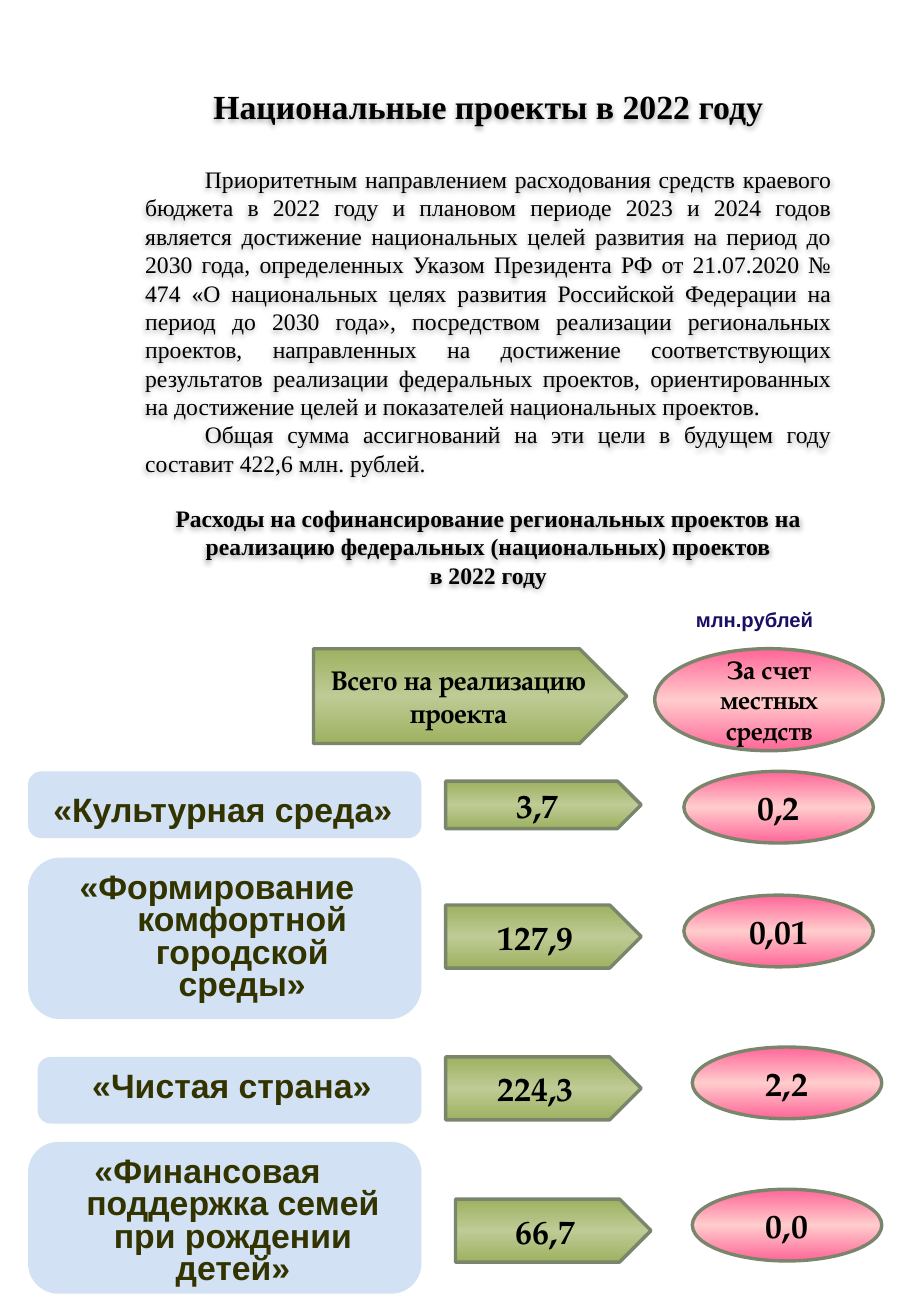
from copy import deepcopy
from dataclasses import dataclass

from lxml.etree import SubElement
from pptx import Presentation
from pptx.dml.color import RGBColor as RGB
from pptx.enum.shapes import MSO_SHAPE as SHAPE
from pptx.enum.text import MSO_ANCHOR as ANCHOR, PP_ALIGN as ALIGN
from pptx.oxml.ns import qn
from pptx.util import Pt


@dataclass(frozen=True)
class Theme:
    ink: str = "000000"
    unit: str = "190F65"
    label: str = "333300"
    panel: str = "A5C4E9"
    outline: str = "7A866C"
    green: tuple = ("9EB160", "BECB95", "9EB160")
    pink: tuple = ("FF6699", "FFCCCC", "FF6699")
    serif: str = "Times New Roman"
    sans: str = "Arial"
    figures: str = "TeX Gyre Pagella"
    large: float = 20
    arrow_head: float = 16
    oval_head: float = 15
    body: float = 14
    small: float = 12


class Page:
    def __init__(self, slide, theme):
        self.shapes = slide.shapes
        self.theme = theme

    def style(self, paragraph, font, size, color, bold=True):
        for run in paragraph.runs:
            run.font.name, run.font.size, run.font.bold = font, Pt(size), bold
            run.font.color.rgb = RGB.from_string(color)

    def shape(self, kind, box):
        shape = self.shapes.add_shape(kind, *map(Pt, box))
        shape.shadow.inherit = False
        return shape

    def article(self, box, paragraphs):
        """Unfilled frame whose text casts a soft shadow."""
        frame = self.shape(SHAPE.ROUNDED_RECTANGLE, box)
        frame.fill.background()
        frame.line.fill.background()
        effects = frame._element.spPr.find(qn("a:effectLst"))
        shadow = SubElement(effects, qn("a:outerShdw"), blurRad=str(Pt(3)),
                            dist=str(Pt(2)), dir="5400000", rotWithShape="0")
        tone = SubElement(shadow, qn("a:srgbClr"), val=self.theme.ink)
        SubElement(tone, qn("a:alpha"), val="35000")

        text = frame.text_frame
        text.word_wrap = True
        text.vertical_anchor = ANCHOR.TOP
        text.text = "\n".join(words for words, *_ in paragraphs)
        for paragraph, (_, size, bold, gap) in zip(text.paragraphs, paragraphs):
            paragraph.alignment = ALIGN.CENTER if bold else ALIGN.JUSTIFY
            paragraph.space_before = Pt(gap)
            if not bold:
                paragraph._p.get_or_add_pPr().set("indent", str(Pt(35.4)))
            self.style(paragraph, self.theme.serif, size, self.theme.ink, bold)

    def badge(self, kind, box, words, size, colors):
        """Outlined gradient shape with a centred caption."""
        badge = self.shape(kind, box)
        badge.fill.gradient()
        badge.fill.gradient_angle = 90
        stops = badge._element.spPr.find(".//" + qn("a:gsLst"))
        stops.append(deepcopy(stops[0]))
        for i, (stop, color) in enumerate(zip(badge.fill.gradient_stops, colors)):
            stop.position = i / 2
            stop.color.rgb = RGB.from_string(color)
        badge.line.color.rgb = RGB.from_string(self.theme.outline)
        badge.line.width = Pt(2)

        text = badge.text_frame
        text.word_wrap = True
        text.vertical_anchor = ANCHOR.MIDDLE
        text.text = words
        text.paragraphs[0].alignment = ALIGN.CENTER
        self.style(text.paragraphs[0], self.theme.figures, size, self.theme.ink)

    def arrow(self, box, words, size):
        self.badge(SHAPE.PENTAGON, box, words, size, self.theme.green)

    def oval(self, box, words, size):
        self.badge(SHAPE.OVAL, box, words, size, self.theme.pink)

    def panel(self, box):
        panel = self.shape(SHAPE.ROUNDED_RECTANGLE, box)
        panel.adjustments[0] = 0.2
        panel.fill.solid()
        panel.fill.fore_color.rgb = RGB.from_string(self.theme.panel)
        color = panel._element.spPr.find(".//" + qn("a:srgbClr"))
        SubElement(color, qn("a:alpha"), val="49000")
        panel.line.fill.background()

    def text(self, box, words, size, color):
        frame = self.shapes.add_textbox(*map(Pt, box)).text_frame
        frame.word_wrap = True
        frame.text = words
        paragraph = frame.paragraphs[0]
        self.style(paragraph, self.theme.sans, size, color)
        return paragraph

    def project_name(self, box, words):
        name = self.text(box, words, self.theme.large, self.theme.label)
        name.alignment = ALIGN.CENTER
        name.line_spacing = 0.8
        name.space_before = Pt(4)
        indents = name._p.get_or_add_pPr()
        indents.set("marL", str(Pt(30)))
        indents.set("indent", str(Pt(-30)))


def main():
    deck = Presentation()
    deck.slide_width, deck.slide_height = Pt(540), Pt(780)
    theme = Theme()
    page = Page(deck.slides.add_slide(deck.slide_layouts[6]), theme)

    # Title, introduction and heading: words, size, bold, space before
    page.article((56.2, 24.5, 466.6, 703.4), [
        ("Национальные проекты в 2022 году", theme.large, True, 0),
        ("Приоритетным направлением расходования средств краевого бюджета "
         "в 2022 году и плановом периоде 2023 и 2024 годов является достижение "
         "национальных целей развития на период до 2030 года, определенных "
         "Указом Президента РФ от 21.07.2020 № 474 «О национальных целях "
         "развития Российской Федерации на период до 2030 года», посредством "
         "реализации региональных проектов, направленных на достижение "
         "соответствующих результатов реализации федеральных проектов, "
         "ориентированных на достижение целей и показателей национальных "
         "проектов.", theme.body, False, 23),
        ("Общая сумма ассигнований на эти цели в будущем году составит "
         "422,6 млн. рублей.", theme.body, False, 0),
        ("Расходы на софинансирование региональных проектов на реализацию "
         "федеральных (национальных) проектов", theme.body, True, 16),
        ("в 2022 году", theme.body, True, 0),
    ])

    # Column heads
    page.text((405.4, 356.4, 112.3, 21.6), "млн.рублей", theme.small, theme.unit)
    page.arrow((185.8, 384.5, 185.8, 56.2), "Всего на реализацию проекта",
               theme.arrow_head)
    page.oval((388.1, 384.5, 135.4, 60.5), "За счет местных средств",
              theme.oval_head)

    # Projects: name, total, local share, panel left/top/height, name box,
    # arrow left and height, oval left and top
    projects = [
        ("«Культурная среда»", "3,7", "0,2", (16.6, 457.2, 39.6),
         (22.3, 468.7, 219.6, 26.6), (264.2, 28.1), (405.4, 457.2)),
        ("«Формирование комфортной городской среды»", "127,9", "0,01",
         (16.6, 508.3, 95.8), (16.6, 514.1, 223.9, 85), (264.2, 37.4),
         (405.4, 530.6)),
        ("«Чистая страна»", "224,3", "2,2", (22.3, 626.4, 39.6),
         (39.6, 632.2, 195.8, 26.6), (264.2, 37.4), (410.4, 620.6)),
        ("«Финансовая поддержка семей при рождении детей»", "66,7", "0,0",
         (16.6, 676.8, 90), (0, 682.6, 246.2, 85), (270, 37.4),
         (410.4, 704.9)),
    ]
    panel_right, arrow_drop = 249.8, 5.8
    for name, total, local, panel, name_box, arrow, oval in projects:
        left, top, height = panel
        page.panel((left, top, panel_right - left, height))
        page.project_name(name_box, name)
        arrow_left, arrow_height = arrow
        page.arrow((arrow_left, oval[1] + arrow_drop, 115.9, arrow_height),
                   total, theme.large)
        page.oval((*oval, 112.3, 42.5), local, theme.large)

    deck.save("out.pptx")


if __name__ == "__main__":
    main()
